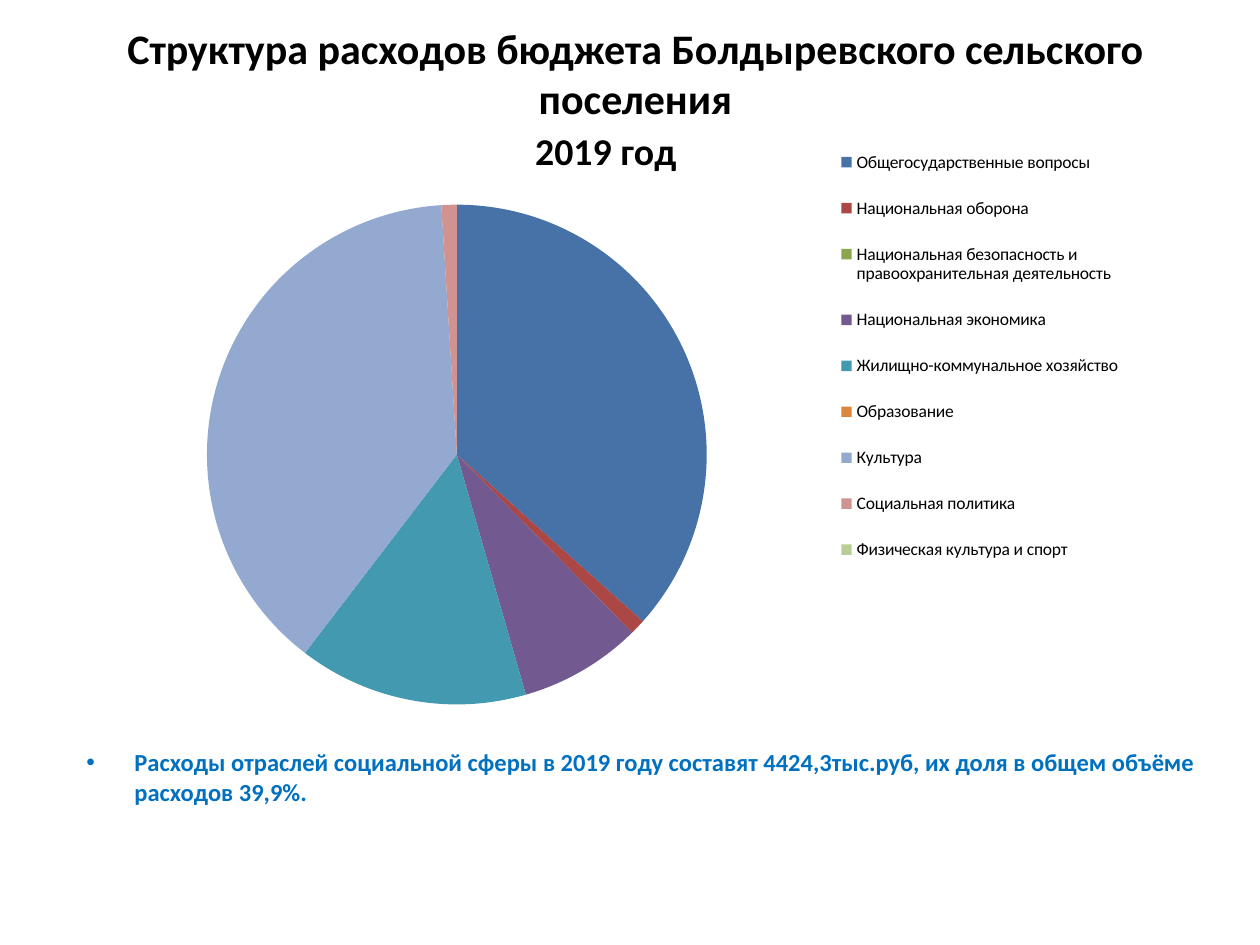
"""Build the slide on the structure of budget spending in 2019."""
from lxml import etree
from pptx import Presentation
from pptx.chart.data import CategoryChartData
from pptx.dml.color import RGBColor
from pptx.enum.chart import XL_CHART_TYPE, XL_LEGEND_POSITION
from pptx.enum.text import MSO_ANCHOR, PP_ALIGN
from pptx.oxml.ns import qn
from pptx.util import Emu, Pt

PIE = XL_CHART_TYPE.PIE
RIGHT = XL_LEGEND_POSITION.RIGHT
MIDDLE, TOP = MSO_ANCHOR.MIDDLE, MSO_ANCHOR.TOP
CENTER, LEFT = PP_ALIGN.CENTER, PP_ALIGN.LEFT

FONT = "Calibri"
COLORS = {"text": "000000", "note": "0070C0"}
TITLE = "Структура расходов бюджета Болдыревского сельского поселения"
CHART_TITLE = "2019 год"
NOTE = ("Расходы отраслей социальной сферы в 2019 году составят 4424,3тыс.руб, "
        "их доля в общем объёме расходов 39,9%.")
SPENDING = [
    ("Общегосударственные вопросы", 37, "4672A8"),
    ("Национальная оборона", 1, "AB4744"),
    ("Национальная безопасность и правоохранительная деятельность", 0, "8AA64F"),
    ("Национальная экономика", 8, "725990"),
    ("Жилищно-коммунальное хозяйство", 15, "4299B0"),
    ("Образование", 0, "DC853E"),
    ("Культура", 39, "93A9CF"),
    ("Социальная политика", 1, "D09392"),
    ("Физическая культура и спорт", 0, "B9CD96"),
]

TITLE_BOX = (25, 40, 1221, 66)
CHART_BOX = (39, 98, 1134, 624)
PIE_BOX = (207, 205, 500, 500)
LEGEND_BOX = (829, 126, 300, 460)
NOTE_BOX = (74, 741, 1134, 103)
INDENT = 48


def px(n):
    return Emu(round(n * 914400 / 126))


def set_font(font, size, color="text", bold=False):
    font.name, font.size, font.bold = FONT, Pt(size), bold
    font.color.rgb = RGBColor.from_string(COLORS[color])


def add_text(slide, box, text, size, color="text", align=LEFT, anchor=TOP, bullet=None):
    tf = slide.shapes.add_textbox(*map(px, box)).text_frame
    tf.word_wrap = True
    tf.vertical_anchor = anchor
    p = tf.paragraphs[0]
    p.alignment = align
    r = p.add_run()
    r.text = text
    set_font(r.font, size, color, bold=True)
    if bullet:
        p.space_before = Pt(size * 0.2)
        pPr = p._p.get_or_add_pPr()
        pPr.set("marL", str(px(INDENT)))
        pPr.set("indent", str(-px(INDENT)))
        etree.SubElement(pPr, qn("a:buFont")).set("typeface", "Arial")
        etree.SubElement(pPr, qn("a:buChar")).set("char", bullet)


def make_layout(box, inner=False):
    layout = etree.Element(qn("c:layout"))
    manual = etree.SubElement(layout, qn("c:manualLayout"))
    left, top, width, height = CHART_BOX
    x, y, w, h = box
    values = [("xMode", "edge"), ("yMode", "edge"),
              ("x", round((x - left) / width, 3)), ("y", round((y - top) / height, 3)),
              ("w", round(w / width, 3)), ("h", round(h / height, 3))]
    if inner:
        values.insert(0, ("layoutTarget", "inner"))
    for tag, value in values:
        etree.SubElement(manual, qn(f"c:{tag}")).set("val", str(value))
    return layout


def place(parent, index, layout):
    for old in parent.findall(qn("c:layout")):
        parent.remove(old)
    parent.insert(index, layout)


def add_pie(slide):
    data = CategoryChartData()
    data.categories = [name for name, _, _ in SPENDING]
    data.add_series(CHART_TITLE, [value for _, value, _ in SPENDING])
    chart = slide.shapes.add_chart(PIE, *map(px, CHART_BOX), data).chart
    set_font(chart.font, 18)
    chart.has_title = True
    tf = chart.chart_title.text_frame
    tf.text = CHART_TITLE
    set_font(tf.paragraphs[0].runs[0].font, 21.6, bold=True)
    chart.has_legend = True
    legend = chart.legend
    legend.position = RIGHT
    legend.include_in_layout = False
    set_font(legend.font, 10)
    plot = chart.plots[0]
    plot.vary_by_categories = True
    for i, (_, _, color) in enumerate(SPENDING):
        fill = plot.series[0].points[i].format.fill
        fill.solid()
        fill.fore_color.rgb = RGBColor.from_string(color)
    place(chart._chartSpace.chart.plotArea, 0, make_layout(PIE_BOX, inner=True))
    place(legend._element, 1, make_layout(LEGEND_BOX))


def main():
    prs = Presentation()
    prs.slide_width, prs.slide_height = px(1260), px(945)
    slide = prs.slides.add_slide(prs.slide_layouts[6])
    add_text(slide, TITLE_BOX, TITLE, 24, align=CENTER, anchor=MIDDLE)
    add_pie(slide)
    add_text(slide, NOTE_BOX, NOTE, 14, color="note", bullet="•")
    prs.save("out.pptx")


if __name__ == "__main__":
    main()
